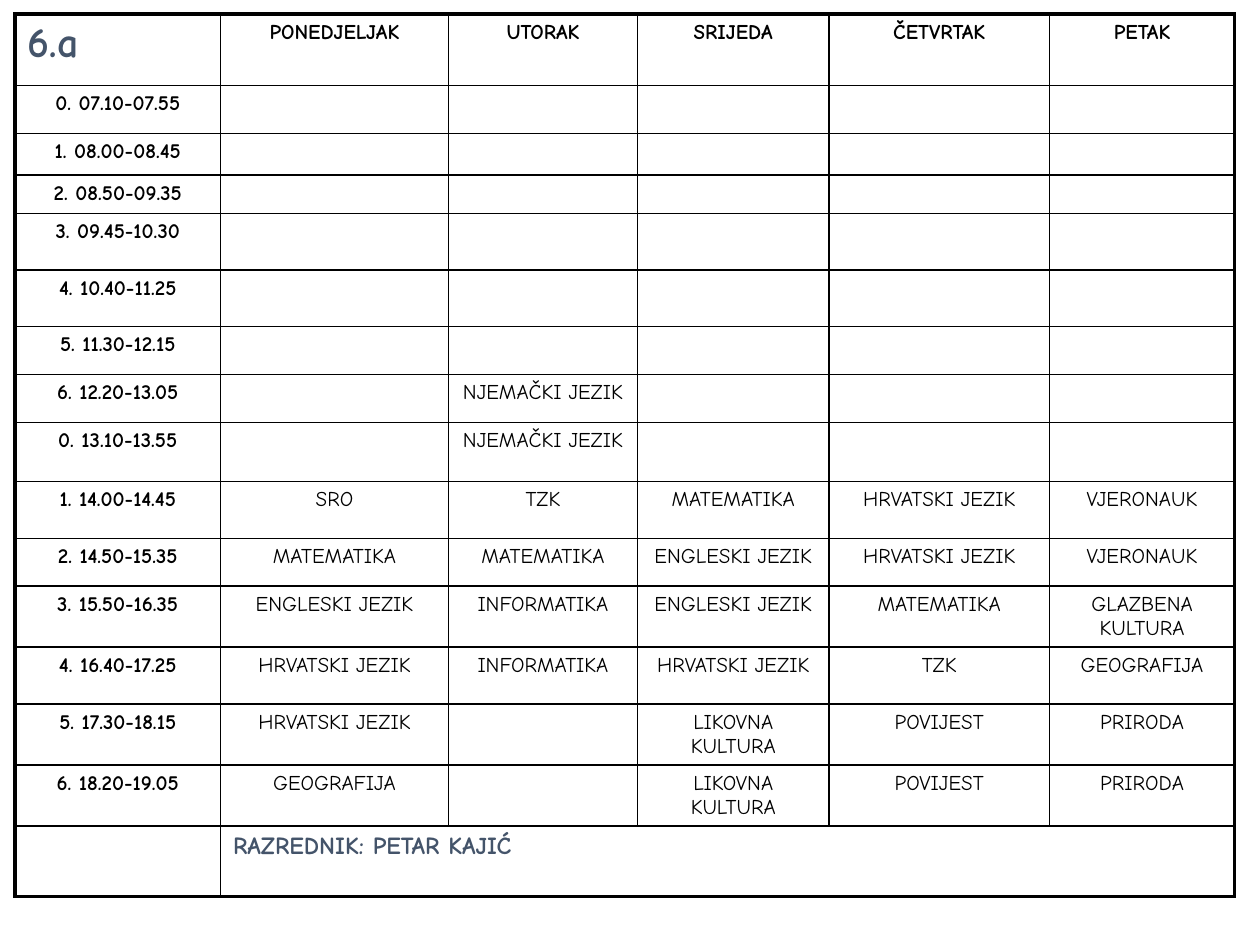
from lxml import etree
from pptx import Presentation
from pptx import util as u
from pptx.dml.color import RGBColor
from pptx.enum import text
from pptx.oxml import ns

COLORS = {"ink": "000000", "accent": "44546A"}
FONT = "Comic Neue"
COLUMN_WIDTHS = [1.63, 1.81, 1.5, 1.52, 1.75, 1.47]
ROW_HEIGHTS = [0.57, 0.38, 0.33, 0.26, 0.45, 0.45, 0.38, 0.38,
               0.47, 0.45, 0.38, 0.45, 0.45, 0.43, 0.45, 0.56]
TIMETABLE = [
    ["6.a", "PONEDJELJAK", "UTORAK", "SRIJEDA", "ČETVRTAK", "PETAK"],
    ["0. 07.10-07.55"],
    ["1. 08.00-08.45"],
    ["2. 08.50-09.35"],
    ["3. 09.45-10.30"],
    ["4. 10.40-11.25"],
    ["5. 11.30-12.15"],
    ["6. 12.20-13.05", "", "NJEMAČKI JEZIK"],
    ["0. 13.10-13.55", "", "NJEMAČKI JEZIK"],
    ["1. 14.00-14.45", "SRO", "TZK", "MATEMATIKA", "HRVATSKI JEZIK", "VJERONAUK"],
    ["2. 14.50-15.35", "MATEMATIKA", "MATEMATIKA", "ENGLESKI JEZIK", "HRVATSKI JEZIK", "VJERONAUK"],
    ["3. 15.50-16.35", "ENGLESKI JEZIK", "INFORMATIKA", "ENGLESKI JEZIK", "MATEMATIKA", "GLAZBENA KULTURA"],
    ["4. 16.40-17.25", "HRVATSKI JEZIK", "INFORMATIKA", "HRVATSKI JEZIK", "TZK", "GEOGRAFIJA"],
    ["5. 17.30-18.15", "HRVATSKI JEZIK", "", "LIKOVNA KULTURA", "POVIJEST", "PRIRODA"],
    ["6. 18.20-19.05", "GEOGRAFIJA", "", "LIKOVNA KULTURA", "POVIJEST", "PRIRODA"],
    ["", "RAZREDNIK: PETAR KAJIĆ"],
]
SPECIAL_SIZES = {(0, 0): 24, (15, 1): 14}


def set_borders(cell, widths):
    properties = cell._tc.get_or_add_tcPr()
    for position, (side, width) in enumerate(widths.items()):
        line = etree.Element(ns.qn(f"a:ln{side}"), w=str(u.Pt(width)))
        fill = etree.SubElement(line, ns.qn("a:solidFill"))
        etree.SubElement(fill, ns.qn("a:srgbClr"), val=COLORS["ink"])
        properties.insert(position, line)


deck = Presentation()
deck.slide_width, deck.slide_height = u.Inches(10), u.Inches(7.5)
page = deck.slides.add_slide(deck.slide_layouts[6])

last_row, last_column = len(ROW_HEIGHTS) - 1, len(COLUMN_WIDTHS) - 1
frame = page.shapes.add_table(
    len(ROW_HEIGHTS), len(COLUMN_WIDTHS), u.Inches(0.12), u.Inches(0.11),
    u.Inches(sum(COLUMN_WIDTHS)), u.Inches(sum(ROW_HEIGHTS)))
table = frame.table
table.first_row = table.horz_banding = False
for column, width in zip(table.columns, COLUMN_WIDTHS):
    column.width = u.Inches(width)
for row, height in zip(table.rows, ROW_HEIGHTS):
    row.height = u.Inches(height)
table.cell(last_row, 1).merge(table.cell(last_row, last_column))

for r in range(last_row + 1):
    for c in range(last_column + 1):
        cell = table.cell(r, c)
        cell.fill.background()
        right_edge = c == last_column or cell.is_merge_origin
        set_borders(cell, {
            "L": 2.25 if c == 0 else 1,
            "R": 2.25 if right_edge else 1,
            "T": 2.25 if r == 0 else 1,
            "B": 2.25 if r == last_row else 1,
        })
        para = cell.text_frame.paragraphs[0]
        words = TIMETABLE[r][c] if c < len(TIMETABLE[r]) else ""
        if not words:
            etree.SubElement(para._p, ns.qn("a:endParaRPr"), sz="1200")
            continue
        para.text = words
        special = (r, c) in SPECIAL_SIZES
        if not special:
            para.alignment = text.PP_ALIGN.CENTER
        font = para.runs[0].font
        font.name = FONT
        font.size = u.Pt(SPECIAL_SIZES.get((r, c), 12))
        font.bold = r == 0 or c == 0 or special
        font.color.rgb = RGBColor.from_string(COLORS["accent" if special else "ink"])

deck.save("out.pptx")
